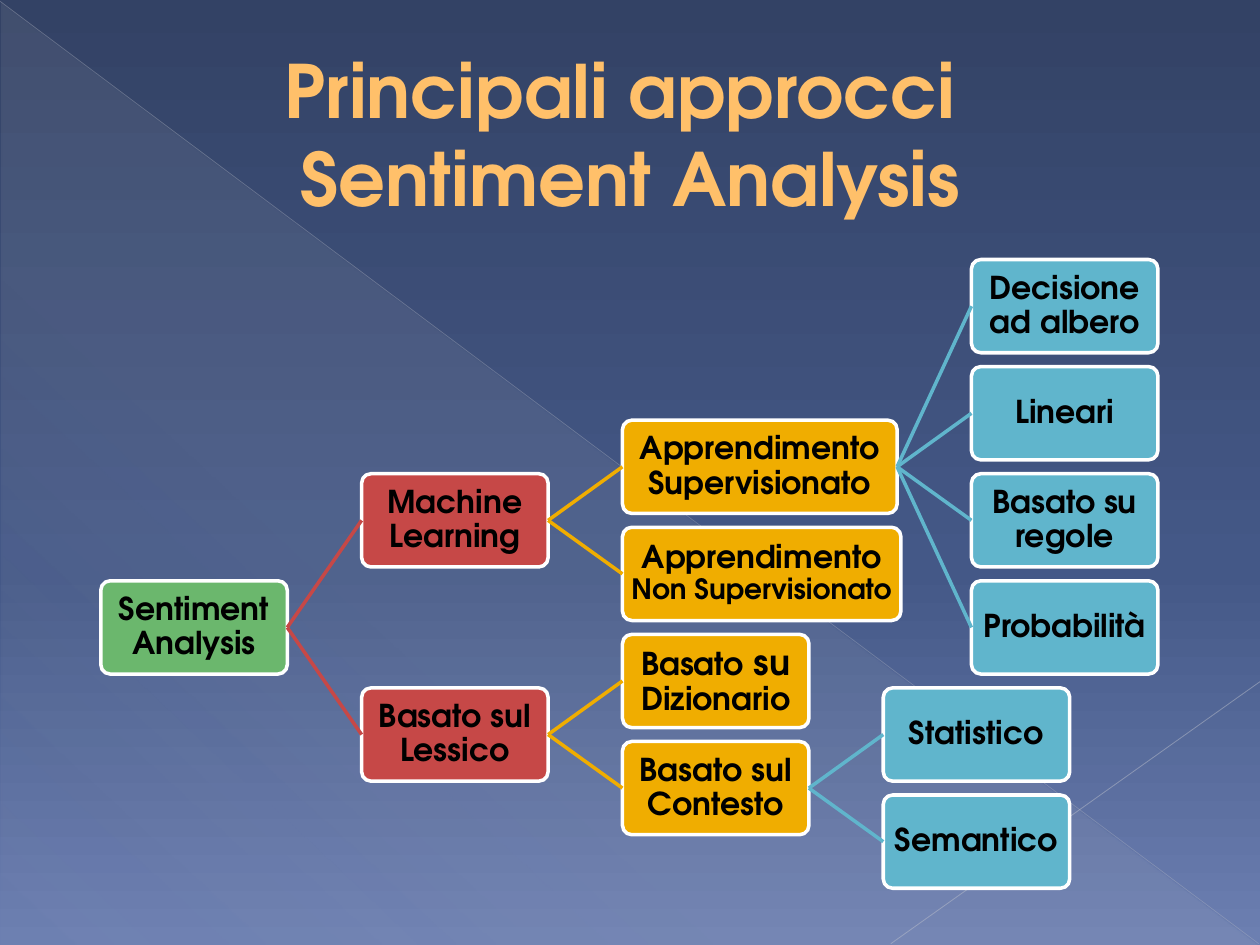
from lxml.etree import SubElement
from pptx import Presentation
from pptx.dml.color import RGBColor
from pptx.enum.shapes import MSO_CONNECTOR as CONN, MSO_SHAPE as SHAPE
from pptx.enum.text import MSO_ANCHOR as ANCHOR, PP_ALIGN as ALIGN
from pptx.oxml.ns import qn
from pptx.util import Inches, Pt

FONT = "TeX Gyre Adventor"
BLACK = RGBColor(0, 0, 0)
WHITE = RGBColor(255, 255, 255)
GREEN = RGBColor(0x6B, 0xB7, 0x6D)
RED = RGBColor(0xC6, 0x48, 0x47)
AMBER = RGBColor(0xF0, 0xAD, 0x00)
BLUE = RGBColor(0x60, 0xB5, 0xCC)
PEACH = RGBColor(0xFF, 0xC0, 0x6A)
OCHRE = RGBColor(0xA6, 0x78, 0x00)
NIGHT = RGBColor(0x33, 0x42, 0x65)
DUSK = RGBColor(0x44, 0x58, 0x87)
HAZE = RGBColor(0x6C, 0x7F, 0xB1)
MIST = RGBColor(0xD4, 0xD4, 0xD6)
RAY_1 = RGBColor(0xB9, 0xBD, 0xC8)
RAY_2 = RGBColor(0xC1, 0xC4, 0xCE)


def set_gradient(fill, element, stops, angle):
    fill.gradient()
    grad = next(element.iter(qn("a:gradFill")))
    grad.find(qn("a:lin")).set("ang", str(angle * 60000))
    gs_list = grad.find(qn("a:gsLst"))
    for gs in list(gs_list):
        gs_list.remove(gs)
    for pos, color, alpha in stops:
        gs = SubElement(gs_list, qn("a:gs"), pos=str(pos * 1000))
        clr = SubElement(gs, qn("a:srgbClr"), val=str(color))
        SubElement(clr, qn("a:alpha"), val=str(alpha * 1000))


def add_line(x1, y1, x2, y2, color, width):
    line = s.shapes.add_connector(CONN.STRAIGHT, Inches(x1), Inches(y1), Inches(x2), Inches(y2))
    line.line.color.rgb = color
    line.line.width = Pt(width)
    SubElement(line._element.spPr, qn("a:effectLst"))
    return line


prs = Presentation()
prs.slide_width, prs.slide_height = Inches(10), Inches(7.5)
s = prs.slides.add_slide(prs.slide_layouts[6])
set_gradient(s.background.fill, s._element,
             [(0, NIGHT, 100), (60, DUSK, 100), (100, HAZE, 100)], 90)

sp = s.shapes.add_shape(SHAPE.RIGHT_TRIANGLE, Inches(0.01), Inches(0.02), Inches(9.98), Inches(7.48))
sp.shadow.inherit = False
sp.line.fill.background()
set_gradient(sp.fill, sp._element, [(0, MIST, 10), (70, MIST, 8), (100, MIST, 1)], 133)

for ends, color, width, alpha in [
    ((0, 0.01, 9.99, 7.49), RAY_1, 0.39, 35),
    ((10, 5.41, 7.07, 7.49), RAY_2, 0.47, 45),
]:
    ray = add_line(*ends, color, width)
    clr = next(ray._element.spPr.iter(qn("a:srgbClr")))
    SubElement(clr, qn("a:alpha"), val=str(alpha * 1000))

title = s.shapes.add_textbox(Inches(0.5), Inches(0.29), Inches(9), Inches(1.53))
tf = title.text_frame
tf.word_wrap = True
tf.vertical_anchor = ANCHOR.MIDDLE
p = tf.paragraphs[0]
p.text = "Principali approcci \vSentiment Analysis"
p.alignment = ALIGN.CENTER
for r in p.runs:
    r.font.name, r.font.size, r.font.bold = FONT, Pt(42), True
    r.font.color.rgb = PEACH
    ln = r._r.get_or_add_rPr()
    outline = ln.makeelement(qn("a:ln"), {"w": str(Pt(0.5))})
    SubElement(SubElement(outline, qn("a:solidFill")), qn("a:srgbClr"), val=str(OCHRE))
    ln.insert(0, outline)

LEFT, TOP, ROW = 0.8, 2.06, 0.85
BOX_W, BOX_H, GAP = 1.48, 0.74, 0.59
LEVEL_COLORS = [GREEN, RED, AMBER, BLUE]

nodes = [
    ("root", None, 3, BOX_W, [("Sentiment Analysis", 18)]),
    ("ml", "root", 2, BOX_W, [("Machine Learning", 18)]),
    ("supervised", "ml", 1.5, 2.18, [("Apprendimento Supervisionato", 18)]),
    ("tree", "supervised", 0, BOX_W, [("Decisione ad albero", 18)]),
    ("linear", "supervised", 1, BOX_W, [("Lineari", 18)]),
    ("rules", "supervised", 2, BOX_W, [("Basato su regole", 18)]),
    ("probability", "supervised", 3, BOX_W, [("Probabilità", 18)]),
    ("unsupervised", "ml", 2.5, 2.21, [("Apprendimento", 18), (" Non Supervisionato", 16)]),
    ("lexicon", "root", 4, BOX_W, [("Basato sul Lessico", 18)]),
    ("dictionary", "lexicon", 3.5, BOX_W, [("Basato", 18), (" su ", 20), ("Dizionario", 18)]),
    ("context", "lexicon", 4.5, BOX_W, [("Basato sul Contesto", 18)]),
    ("statistical", "context", 4, BOX_W, [("Statistico", 18)]),
    ("semantic", "context", 5, BOX_W, [("Semantico", 18)]),
]

placed = {}
for key, parent, row, width, runs in nodes:
    x, level = LEFT, 0
    if parent:
        parent_box, parent_right, parent_level = placed[parent]
        x, level = parent_right + GAP, parent_level + 1
    color = LEVEL_COLORS[level]
    box = s.shapes.add_shape(SHAPE.ROUNDED_RECTANGLE, Inches(x), Inches(TOP + row * ROW),
                             Inches(width), Inches(BOX_H))
    box.adjustments[0] = 0.1
    box.shadow.inherit = False
    box.fill.solid()
    box.fill.fore_color.rgb = color
    box.line.color.rgb = WHITE
    box.line.width = Pt(2)
    tf = box.text_frame
    tf.word_wrap = True
    tf.vertical_anchor = ANCHOR.MIDDLE
    tf.margin_left = tf.margin_right = tf.margin_top = tf.margin_bottom = Inches(0.01)
    p = tf.paragraphs[0]
    p.alignment = ALIGN.CENTER
    p.line_spacing = 0.9
    p.font.name, p.font.bold = FONT, True
    p.font.color.rgb = BLACK
    for text, size in runs:
        r = p.add_run()
        r.text = text
        r.font.size = Pt(size)
    if parent:
        link = add_line(0, 0, 1, 1, color, 2)
        link.begin_connect(parent_box, 3)
        link.end_connect(box, 1)
    placed[key] = box, x + width, level

prs.save("out.pptx")
